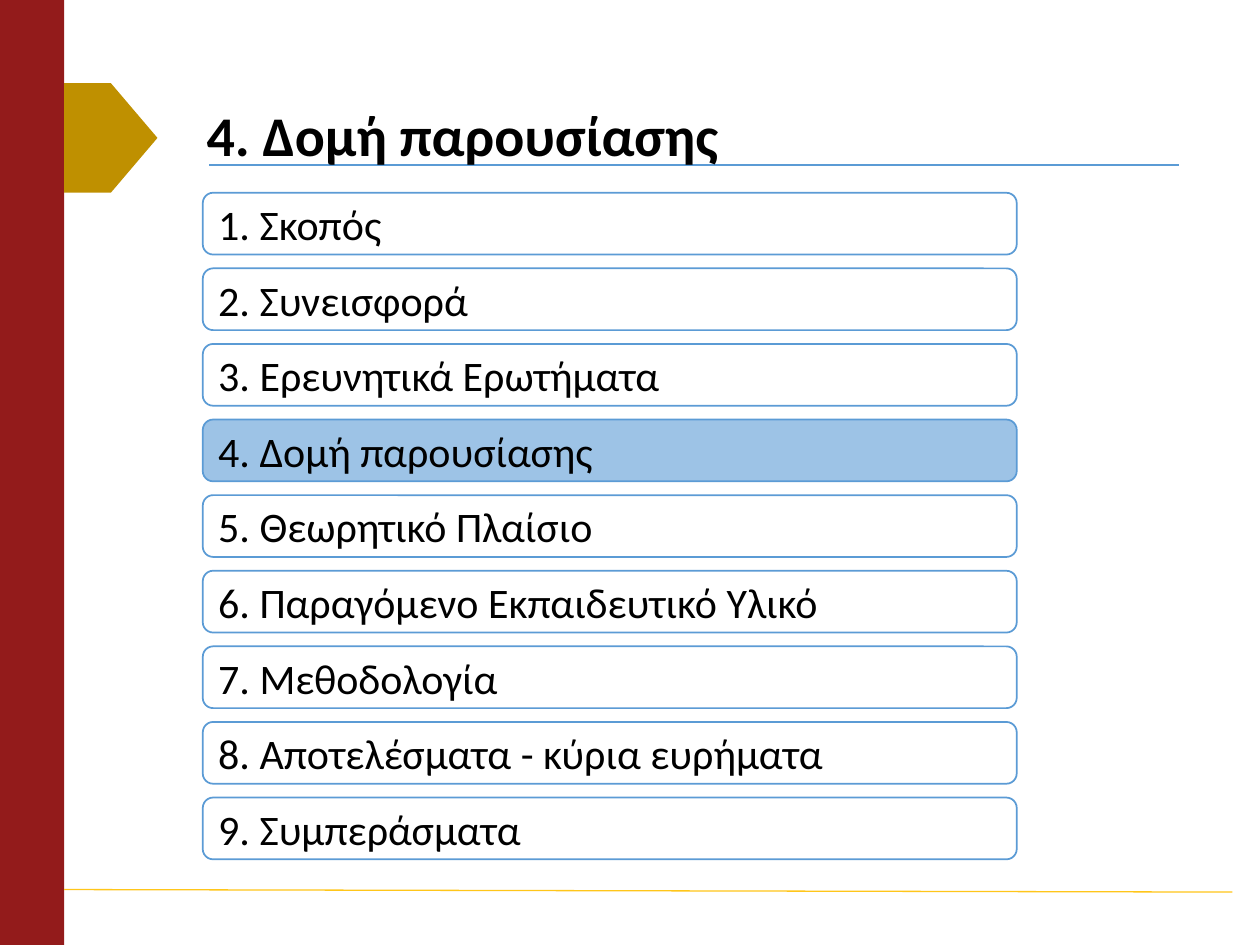
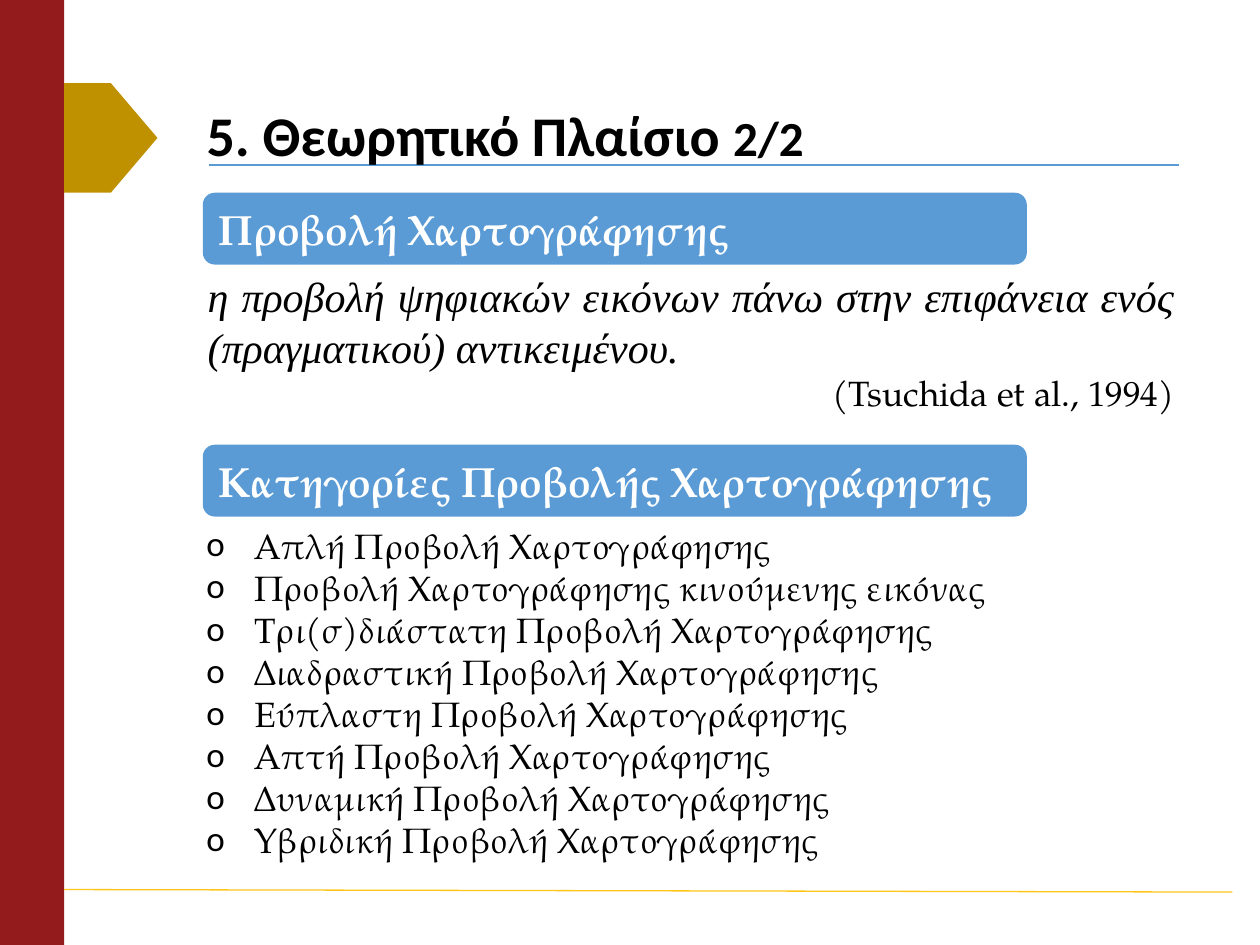
from lxml.etree import SubElement
from pptx import Presentation
from pptx.dml.color import RGBColor
from pptx.enum.shapes import MSO_CONNECTOR as Connector, MSO_SHAPE as Shape
from pptx.enum.text import MSO_ANCHOR as Anchor, MSO_AUTO_SIZE as AutoSize, PP_ALIGN as Align
from pptx.oxml.ns import qn
from pptx.util import Inches, Pt

WIDTH, HEIGHT = 10, 7.5
BLACK, WHITE, RED, GOLD = "000000", "FFFFFF", "931B1B", "BF9000"
BLUE, LIGHT_BLUE, YELLOW = "5B9BD5", "9DC3E6", "FFC61A"
SANS, SERIF, QUOTE = "Calibri", "TeX Gyre Pagella", "Times New Roman"
TITLE_ONLY = 5

BAND = 0.51            # width of the red side band
LEFT, TOP = 1.61, 1.53  # first content row
TEXT_LEFT = 1.54
TEXT_WIDTH = 7.87
ROW_PITCH, ROW_HEIGHT = 0.6, 0.49

AGENDA = [
    "Σκοπός", "Συνεισφορά", "Ερευνητικά Ερωτήματα", "Δομή παρουσίασης",
    "Θεωρητικό Πλαίσιο", "Παραγόμενο Εκπαιδευτικό Υλικό", "Μεθοδολογία",
    "Αποτελέσματα - κύρια ευρήματα", "Συμπεράσματα",
]
CATEGORIES = [
    "Απλή Προβολή Χαρτογράφησης",
    "Προβολή Χαρτογράφησης κινούμενης εικόνας",
    "Τρι(σ)διάστατη Προβολή Χαρτογράφησης",
    "Διαδραστική Προβολή Χαρτογράφησης",
    "Εύπλαστη Προβολή Χαρτογράφησης",
    "Απτή Προβολή Χαρτογράφησης",
    "Δυναμική Προβολή Χαρτογράφησης",
    "Υβριδική Προβολή Χαρτογράφησης",
]


def rgb(color):
    return RGBColor.from_string(color)


def add_run(para, text, size, font=SANS, color=BLACK, bold=False, italic=False):
    span = para.add_run()
    span.text = text
    span.font.size = Pt(size)
    span.font.name = font
    span.font.bold = bold
    span.font.italic = italic
    span.font.color.rgb = rgb(color)


def add_box(page, kind, left, top, width, height, fill, line=None):
    box = page.shapes.add_shape(
        kind, Inches(left), Inches(top), Inches(width), Inches(height))
    box.shadow.inherit = False
    box.fill.solid()
    box.fill.fore_color.rgb = rgb(fill)
    if line:
        box.line.color.rgb = rgb(line)
        box.line.width = Pt(1)
    else:
        box.line.fill.background()
    return box


def add_label(page, top, width, height, text, fill, line=None, **style):
    """Rounded bar with one left-aligned line of text."""
    box = add_box(page, Shape.ROUNDED_RECTANGLE, LEFT, top, width, height, fill, line)
    box.text_frame.vertical_anchor = Anchor.MIDDLE
    para = box.text_frame.paragraphs[0]
    para.alignment = Align.LEFT
    add_run(para, text, 24, **style)


def add_heading(page, top, text):
    add_label(page, top, 6.54, 0.57, text, BLUE, font=SERIF, color=WHITE, bold=True)


def add_rule(page, start, end, color):
    rule = page.shapes.add_connector(Connector.STRAIGHT, *map(Inches, start + end))
    rule.line.color.rgb = rgb(color)
    rule.line.width = Pt(0.75)
    SubElement(rule._element.spPr, qn("a:effectLst"))


def add_text_frame(page, left, top, width, height):
    box = page.shapes.add_textbox(
        Inches(left), Inches(top), Inches(width), Inches(height))
    box.text_frame.word_wrap = True
    return box.text_frame


def add_bullet(para, indent):
    props = para._p.get_or_add_pPr()
    props.set("marL", str(Inches(indent)))
    props.set("indent", str(-Inches(indent)))
    SubElement(props, qn("a:buFont"), typeface=SANS)
    SubElement(props, qn("a:buChar"), char="o")


def add_page(deck, title_runs):
    """Slide with the shared band, arrow and rules; title_runs holds (text, size)."""
    page = deck.slides.add_slide(deck.slide_layouts[TITLE_ONLY])
    add_box(page, Shape.RECTANGLE, 0, 0, BAND, HEIGHT, RED)
    add_rule(page, (1.66, 1.31), (9.36, 1.31), BLUE)
    add_rule(page, (BAND, 7.06), (9.78, 7.08), YELLOW)
    add_box(page, Shape.PENTAGON, BAND, 0.66, 0.74, 0.87, GOLD)

    title = page.shapes.title
    page.shapes._spTree.append(title._element)  # title lies above the rule
    title.left, title.top = Inches(TEXT_LEFT), Inches(0.68)
    title.width, title.height = Inches(TEXT_WIDTH), Inches(0.84)
    title.text_frame.auto_size = AutoSize.NONE
    title.text_frame.vertical_anchor = Anchor.MIDDLE
    para = title.text_frame.paragraphs[0]
    para.alignment = Align.LEFT
    para.line_spacing = 0.9
    for text, size in title_runs:
        add_run(para, text, size, bold=True)
    return page


def build_agenda(deck, current):
    page = add_page(deck, [(f"{current}. {AGENDA[current - 1]}", 32)])
    for number, topic in enumerate(AGENDA, 1):
        add_label(page, TOP + (number - 1) * ROW_PITCH, 6.46, ROW_HEIGHT,
                  f"{number}. {topic}",
                  LIGHT_BLUE if number == current else WHITE, BLUE)


def build_theory(deck):
    page = add_page(deck, [("5. Θεωρητικό Πλαίσιο ", 32), ("2/2", 28)])
    add_heading(page, TOP, "Προβολή Χαρτογράφησης")
    frame = add_text_frame(page, 1.55, 2.1, TEXT_WIDTH, 1.25)
    quote = frame.paragraphs[0]
    quote.alignment = Align.JUSTIFY
    add_run(quote, "η προβολή ψηφιακών εικόνων πάνω στην επιφάνεια ενός "
            "(πραγματικού) αντικειμένου.", 24, QUOTE, italic=True)
    source = frame.add_paragraph()
    source.alignment = Align.RIGHT
    add_run(source, "(Tsuchida et al., 1994)", 20, SERIF)

    add_heading(page, TOP + 2, "Κατηγορίες Προβολής Χαρτογράφησης")
    frame = add_text_frame(page, TEXT_LEFT, 4.11, 8.03, 2.79)
    for index, category in enumerate(CATEGORIES):
        para = frame.add_paragraph() if index else frame.paragraphs[0]
        add_bullet(para, 0.38)
        add_run(para, category, 20, SERIF)


def main():
    deck = Presentation()
    deck.slide_width, deck.slide_height = Inches(WIDTH), Inches(HEIGHT)
    build_agenda(deck, current=4)
    build_theory(deck)
    deck.save("out.pptx")


if __name__ == "__main__":
    main()
